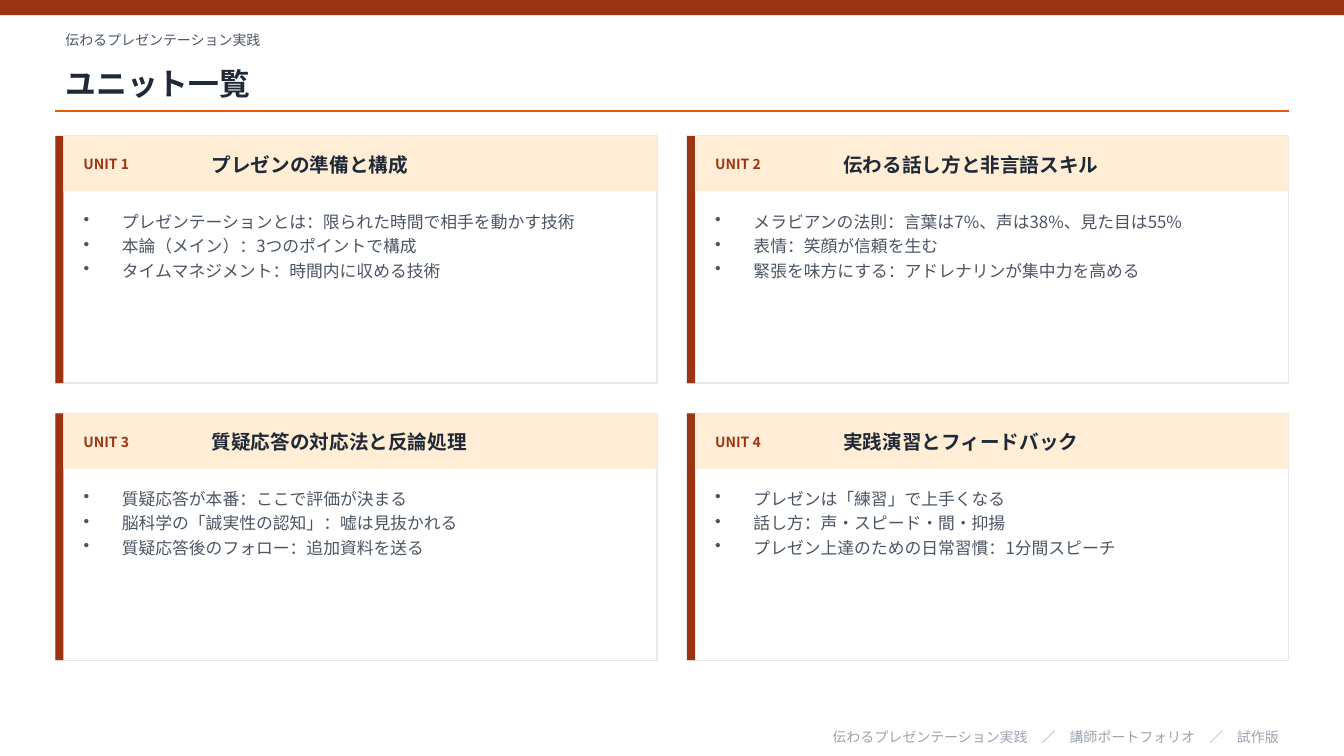
from lxml import etree
from pptx import Presentation
from pptx.dml.color import RGBColor
from pptx.enum.shapes import MSO_CONNECTOR, MSO_SHAPE
from pptx.enum.text import MSO_ANCHOR, MSO_AUTO_SIZE, PP_ALIGN
from pptx.oxml.ns import qn
from pptx.util import Inches, Pt

RECT, STRAIGHT = MSO_SHAPE.RECTANGLE, MSO_CONNECTOR.STRAIGHT
TOP, MIDDLE = MSO_ANCHOR.TOP, MSO_ANCHOR.MIDDLE
LEFT, RIGHT = PP_ALIGN.LEFT, PP_ALIGN.RIGHT
NO_FIT = MSO_AUTO_SIZE.NONE

RUST = RGBColor(0x9A, 0x34, 0x12)
ORANGE = RGBColor(0xEA, 0x58, 0x0C)
PEACH = RGBColor(0xFF, 0xED, 0xD5)
WHITE = RGBColor(0xFF, 0xFF, 0xFF)
BORDER = RGBColor(0xE5, 0xE7, 0xEB)
INK = RGBColor(0x1F, 0x29, 0x37)
SLATE = RGBColor(0x4B, 0x55, 0x63)
MUTED = RGBColor(0x9C, 0xA3, 0xAF)

FONT = "Noto Sans CJK JP"
EYEBROW = {"size": Pt(10), "bold": False, "color": SLATE}
TITLE = {"size": Pt(22), "bold": True, "color": INK}
UNIT_TAG = {"size": Pt(10), "bold": True, "color": RUST}
UNIT_NAME = {"size": Pt(14), "bold": True, "color": INK}
POINT = {"size": Pt(12), "bold": False, "color": SLATE}
FOOTER = {"size": Pt(10), "bold": False, "color": MUTED}

# Slide grid, in inches
SLIDE_W, SLIDE_H = 13.33, 7.5
MARGIN = 0.55
CONTENT_W = SLIDE_W - 2 * MARGIN
COLS, GAP = 2, 0.3
CARD_W, CARD_H = (CONTENT_W - GAP) / COLS, 2.45
CARDS_TOP = 1.35
STRIPE_W, HEAD_H = 0.08, 0.55

UNITS = [
    ("プレゼンの準備と構成", [
        "プレゼンテーションとは：限られた時間で相手を動かす技術",
        "本論（メイン）：3つのポイントで構成",
        "タイムマネジメント：時間内に収める技術"]),
    ("伝わる話し方と非言語スキル", [
        "メラビアンの法則：言葉は7%、声は38%、見た目は55%",
        "表情：笑顔が信頼を生む",
        "緊張を味方にする：アドレナリンが集中力を高める"]),
    ("質疑応答の対応法と反論処理", [
        "質疑応答が本番：ここで評価が決まる",
        "脳科学の「誠実性の認知」：嘘は見抜かれる",
        "質疑応答後のフォロー：追加資料を送る"]),
    ("実践演習とフィードバック", [
        "プレゼンは「練習」で上手くなる",
        "話し方：声・スピード・間・抑揚",
        "プレゼン上達のための日常習慣：1分間スピーチ"]),
]


def add_rect(s, x, y, w, h, fill, line=None):
    sp = s.shapes.add_shape(RECT, Inches(x), Inches(y), Inches(w), Inches(h))
    sp.shadow.inherit = False
    sp.fill.solid()
    sp.fill.fore_color.rgb = fill
    if line is None:
        sp.line.fill.background()
    else:
        sp.line.color.rgb = line
        sp.line.width = Pt(1)


def add_run(p, text, style):
    r = p.add_run()
    r.text = text
    for name, value in style.items():
        if name == "color":
            r.font.color.rgb = value
        else:
            setattr(r.font, name, value)
    r.font.name = FONT
    etree.SubElement(r.font._element, qn("a:ea"), typeface=FONT)


def fill_text(tf, lines, style, anchor=MIDDLE, align=LEFT, bullets=False):
    for name, value in {"word_wrap": True, "auto_size": NO_FIT,
                        "vertical_anchor": anchor}.items():
        setattr(tf, name, value)
    for i, line in enumerate(lines):
        p = tf.add_paragraph() if i else tf.paragraphs[0]
        p.alignment = align
        if bullets:
            pPr = p._p.get_or_add_pPr()
            pPr.set("marL", str(Inches(0.38)))
            pPr.set("indent", str(Inches(-0.38)))
            etree.SubElement(pPr, qn("a:buChar"), char="•")
            p.space_after = Pt(3)
        add_run(p, line, style)


def add_text(s, x, y, w, h, lines, style, **layout):
    box = s.shapes.add_textbox(Inches(x), Inches(y), Inches(w), Inches(h))
    fill_text(box.text_frame, lines, style, **layout)


def add_header(s, x, w):
    add_rect(s, 0, 0, SLIDE_W, 0.15, RUST)
    add_text(s, x, 0.25, w, 0.3, ["伝わるプレゼンテーション実践"], EYEBROW)
    title = s.shapes.title
    for name, value in {"left": x, "top": 0.55, "width": w, "height": 0.55}.items():
        setattr(title, name, Inches(value))
    fill_text(title.text_frame, ["ユニット一覧"], TITLE)
    rule = s.shapes.add_connector(STRAIGHT, Inches(x), Inches(1.1),
                                  Inches(x + w), Inches(1.1))
    rule.line.color.rgb = ORANGE
    rule.line.width = Pt(1)
    etree.SubElement(rule._element.spPr, qn("a:effectLst"))


def add_unit_card(s, x, y, w, h, number, name, points):
    # Frame, side stripe and heading band
    add_rect(s, x, y, w, h, WHITE, BORDER)
    add_rect(s, x, y, STRIPE_W, h, RUST)
    add_rect(s, x + STRIPE_W, y, w - STRIPE_W, HEAD_H, PEACH)
    # Heading and bullet points
    add_text(s, x + 0.18, y + 0.08, 1.2, 0.4, [f"UNIT {number}"], UNIT_TAG)
    add_text(s, x + 1.45, y + 0.08, w - 1.6, 0.4, [name], UNIT_NAME)
    add_text(s, x + 0.18, y + 0.7, w - 0.36, h - 0.85, points, POINT,
             anchor=TOP, bullets=True)


def add_footer(s, x, w):
    add_text(s, x, 7.2, w, 0.22,
             ["伝わるプレゼンテーション実践　／　講師ポートフォリオ　／　試作版"],
             FOOTER, align=RIGHT)


def main():
    prs = Presentation()
    prs.slide_width, prs.slide_height = Inches(SLIDE_W), Inches(SLIDE_H)
    s = prs.slides.add_slide(prs.slide_layouts[5])
    s.background.fill.solid()
    s.background.fill.fore_color.rgb = WHITE
    add_header(s, MARGIN, CONTENT_W)
    for i, (name, points) in enumerate(UNITS):
        row, col = divmod(i, COLS)
        add_unit_card(s, MARGIN + col * (CARD_W + GAP),
                      CARDS_TOP + row * (CARD_H + GAP),
                      CARD_W, CARD_H, i + 1, name, points)
    add_footer(s, MARGIN, CONTENT_W)
    prs.save("out.pptx")


if __name__ == "__main__":
    main()
